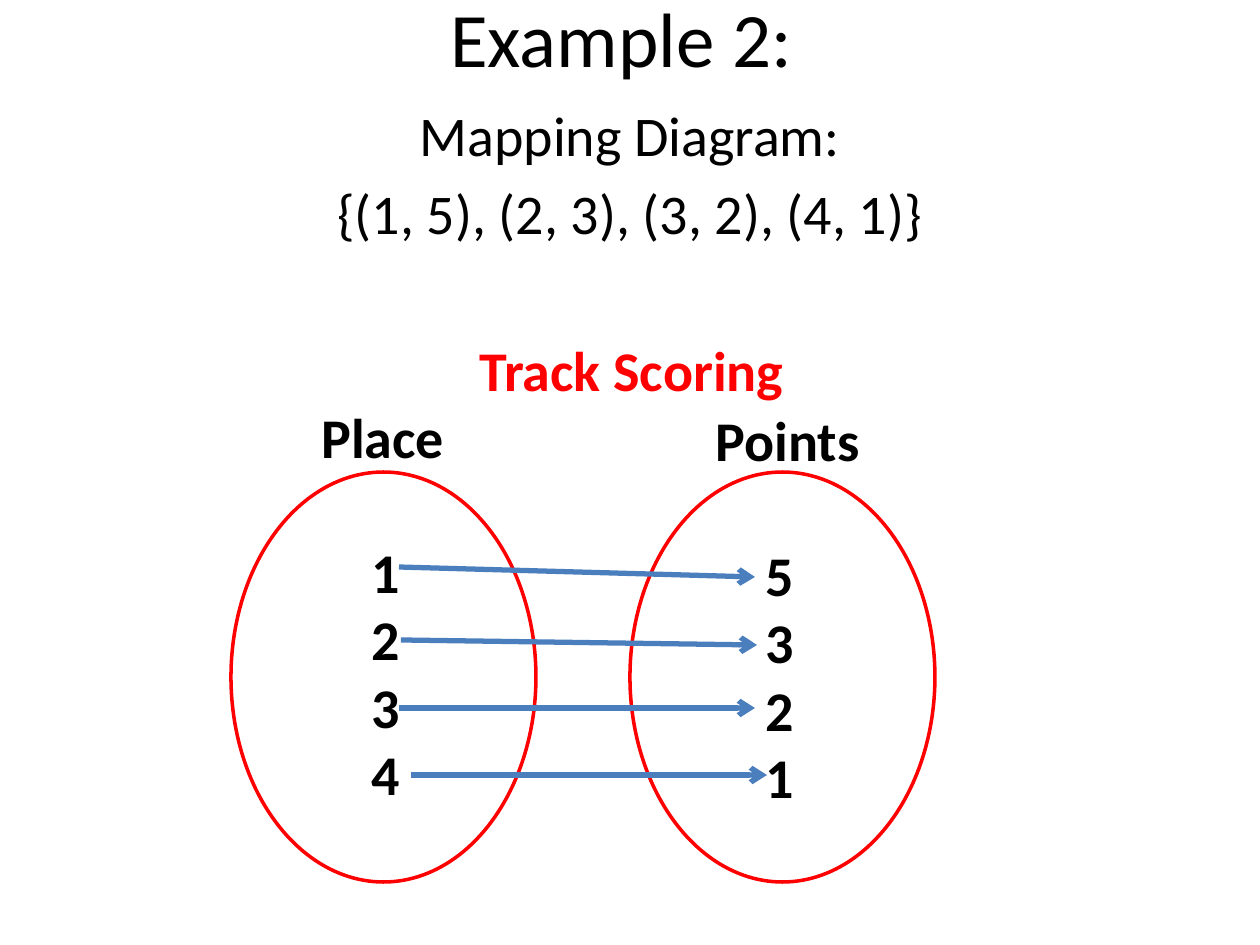
from lxml.etree import SubElement
from pptx import Presentation
from pptx.dml.color import RGBColor
from pptx.enum.shapes import MSO_CONNECTOR, MSO_SHAPE
from pptx.enum.text import MSO_ANCHOR, PP_ALIGN
from pptx.oxml.ns import qn
from pptx.util import Pt

EMU_PER_PX = 914400 / 126
BLACK, RED, BLUE = "000000", "FF0000", "4B7EBC"


def emu(px):
    return round(px * EMU_PER_PX)


def color(hex_code):
    return RGBColor.from_string(hex_code)


def add_text(frame, text, first=False, size=32, ink=BLACK, bold=False,
             align=PP_ALIGN.LEFT, before=0, indent=0, font="Calibri"):
    """Write one paragraph; before is in points, indent in px."""
    para = frame.paragraphs[0] if first else frame.add_paragraph()
    para.alignment = align
    para.space_before = Pt(before)
    if indent:
        properties = para._p.get_or_add_pPr()
        properties.set("marL", str(emu(indent)))
        properties.set("indent", "0")
    span = para.add_run()
    span.text = text
    span.font.name = font
    span.font.size = Pt(size)
    span.font.bold = bold
    span.font.color.rgb = color(ink)


class MappingSlide:
    def __init__(self, page):
        self.shapes = page.shapes
        self.oval_line = Pt(2)
        self.arrow_line = Pt(3)

    def text_box(self, left, top, width, height, anchor=MSO_ANCHOR.TOP):
        box = self.shapes.add_textbox(*map(emu, (left, top, width, height)))
        frame = box.text_frame
        frame.word_wrap = True
        frame.vertical_anchor = anchor
        return frame

    def oval(self, left, top, width, height):
        oval = self.shapes.add_shape(
            MSO_SHAPE.OVAL, *map(emu, (left, top, width, height)))
        oval.shadow.inherit = False
        oval.fill.background()
        oval.line.color.rgb = color(RED)
        oval.line.width = self.oval_line

    def column(self, left, top, width, heading, values):
        """Write a heading with its set members, one line apart, below it."""
        frame = self.text_box(left, top, width, 420)
        add_text(frame, heading, first=True, bold=True)
        for index, value in enumerate(values):
            add_text(frame, str(value), bold=True, indent=50,
                     before=0 if index else 39)

    def arrow(self, x1, y1, x2, y2):
        arrow = self.shapes.add_connector(
            MSO_CONNECTOR.STRAIGHT, *map(emu, (x1, y1, x2, y2)))
        arrow.line.color.rgb = color(BLUE)
        arrow.line.width = self.arrow_line
        SubElement(arrow.line._get_or_add_ln(), qn("a:tailEnd"), type="arrow")
        SubElement(arrow._element.spPr, qn("a:effectLst"))


def main():
    deck = Presentation()
    deck.slide_width, deck.slide_height = emu(1260), emu(945)
    page = deck.slides.add_slide(deck.slide_layouts[6])
    slide = MappingSlide(page)

    title = slide.text_box(63, -42, 1134, 158, anchor=MSO_ANCHOR.MIDDLE)
    add_text(title, "Example 2: ", first=True, size=44, align=PP_ALIGN.CENTER)

    body = slide.text_box(0, 94, 1260, 624)
    add_text(body, "Mapping Diagram:", first=True, align=PP_ALIGN.CENTER)
    add_text(body, "{(1, 5), (2, 3), (3, 2), (4, 1)}",
             align=PP_ALIGN.CENTER, before=6.4)
    add_text(body, "Track Scoring", ink=RED, bold=True, before=51, indent=467)

    slide.oval(231, 472, 305, 410)
    slide.column(309, 396, 150, "Place", (1, 2, 3, 4))
    slide.column(703, 399, 172, "Points", (5, 3, 2, 1))
    slide.oval(630, 472, 305, 410)

    arrow_ends = [(399, 567, 577), (401, 640, 645),
                  (399, 708, 708), (411, 775, 775)]
    for start, start_y, end_y in arrow_ends:
        slide.arrow(start, start_y, start + 356, end_y)

    deck.save("out.pptx")


if __name__ == "__main__":
    main()
